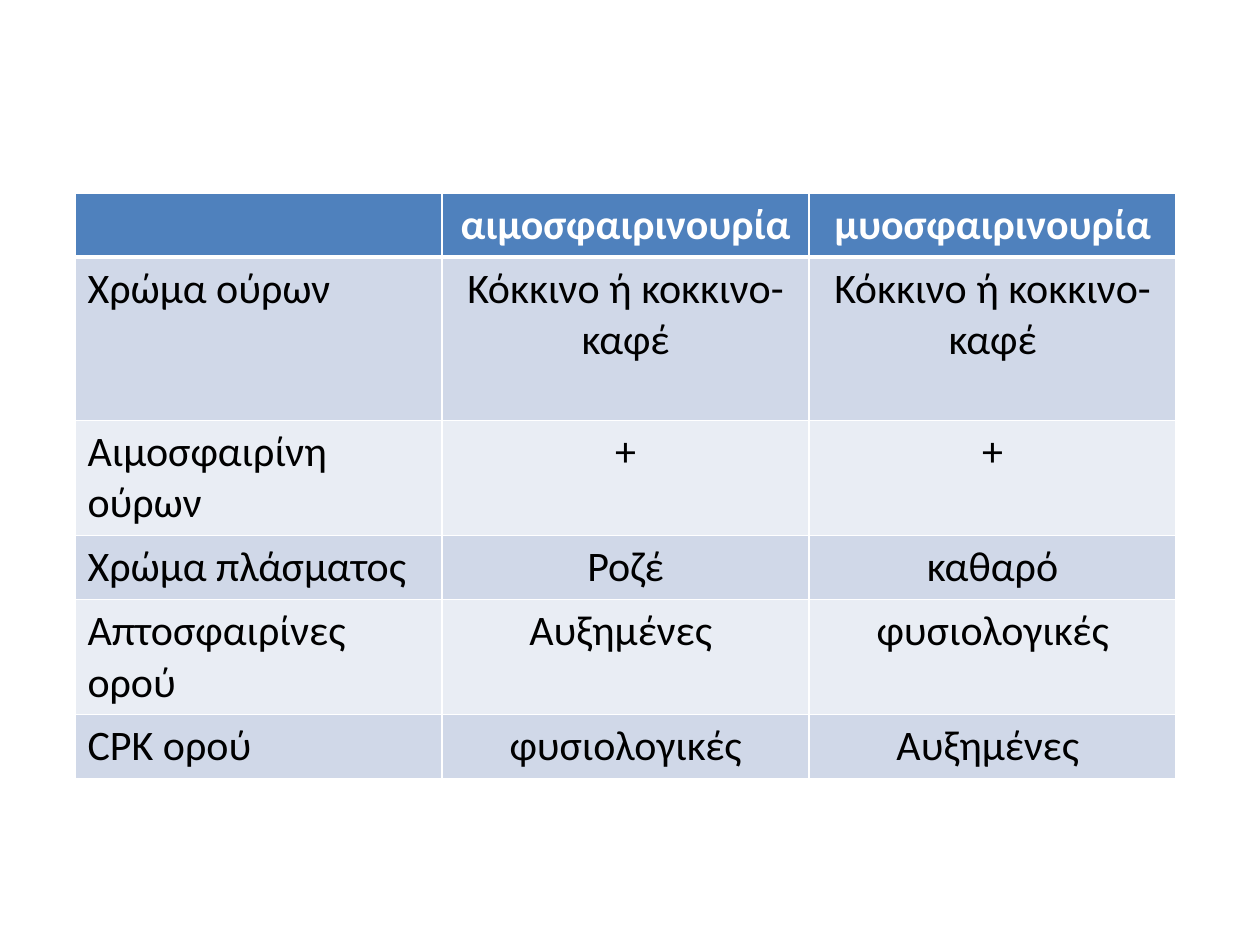
from lxml.etree import SubElement
from pptx import Presentation
from pptx.dml.color import RGBColor
from pptx.enum.text import PP_ALIGN as Align
from pptx.oxml.ns import qn
from pptx.util import Cm, Pt

ROWS = [
    ("", "αιμοσφαιρινουρία", "μυοσφαιρινουρία"),
    ("Χρώμα ούρων", "Κόκκινο ή κοκκινο-καφέ", "Κόκκινο ή κοκκινο-καφέ"),
    ("Αιμοσφαιρίνη ούρων", "+", "+"),
    ("Χρώμα πλάσματος", "Ροζέ", "καθαρό"),
    ("Απτοσφαιρίνες ορού", "Αυξημένες ", "φυσιολογικές"),
    ("CPK ορού", "φυσιολογικές", "Αυξημένες "),
]
ROW_HEIGHTS = [1.26, 3.3, 2.29, 1.28, 2.29, 1.26]
COLUMN_WIDTH = 7.4
LEFT, TOP = 1.51, 3.89
HEADER_FILL = "4F81BD"
BAND_FILLS = ["E9EDF4", "D0D8E8"]
WHITE, BLACK = "FFFFFF", "000000"


def color(hex_text):
    return RGBColor.from_string(hex_text)


def add_borders(cell, widths):
    """Draw white borders; widths maps a side (L, R, T, B) to points."""
    properties = cell._tc.get_or_add_tcPr()
    for side, width in widths.items():
        line = SubElement(properties, qn(f"a:ln{side}"), w=str(Pt(width)))
        fill = SubElement(line, qn("a:solidFill"))
        SubElement(fill, qn("a:srgbClr"), val=WHITE)


def format_cell(cell, text, row, column):
    is_header = row == 0
    # Borders must precede the fill in the cell properties.
    add_borders(cell, {"L": 1, "R": 1, "T": 3 if row == 1 else 1,
                       "B": 3 if is_header else 1})
    cell.fill.solid()
    cell.fill.fore_color.rgb = color(HEADER_FILL if is_header else BAND_FILLS[row % 2])
    cell.text_frame.text = text
    paragraph = cell.text_frame.paragraphs[0]
    paragraph.alignment = Align.CENTER if column else Align.LEFT
    for font in [paragraph.font] + [run.font for run in paragraph.runs]:
        font.name = "Calibri"
        font.size = Pt(24)
        font.bold = is_header
        font.color.rgb = color(WHITE if is_header else BLACK)


presentation = Presentation()
presentation.slide_width, presentation.slide_height = Cm(25.4), Cm(19.05)
slide = presentation.slides.add_slide(presentation.slide_layouts[6])

column_count = len(ROWS[0])
table = slide.shapes.add_table(
    len(ROWS), column_count, Cm(LEFT), Cm(TOP),
    Cm(COLUMN_WIDTH * column_count), Cm(sum(ROW_HEIGHTS))).table
for table_column in table.columns:
    table_column.width = Cm(COLUMN_WIDTH)
for row, (texts, height) in enumerate(zip(ROWS, ROW_HEIGHTS)):
    table.rows[row].height = Cm(height)
    for column, text in enumerate(texts):
        format_cell(table.cell(row, column), text, row, column)

presentation.save("out.pptx")
